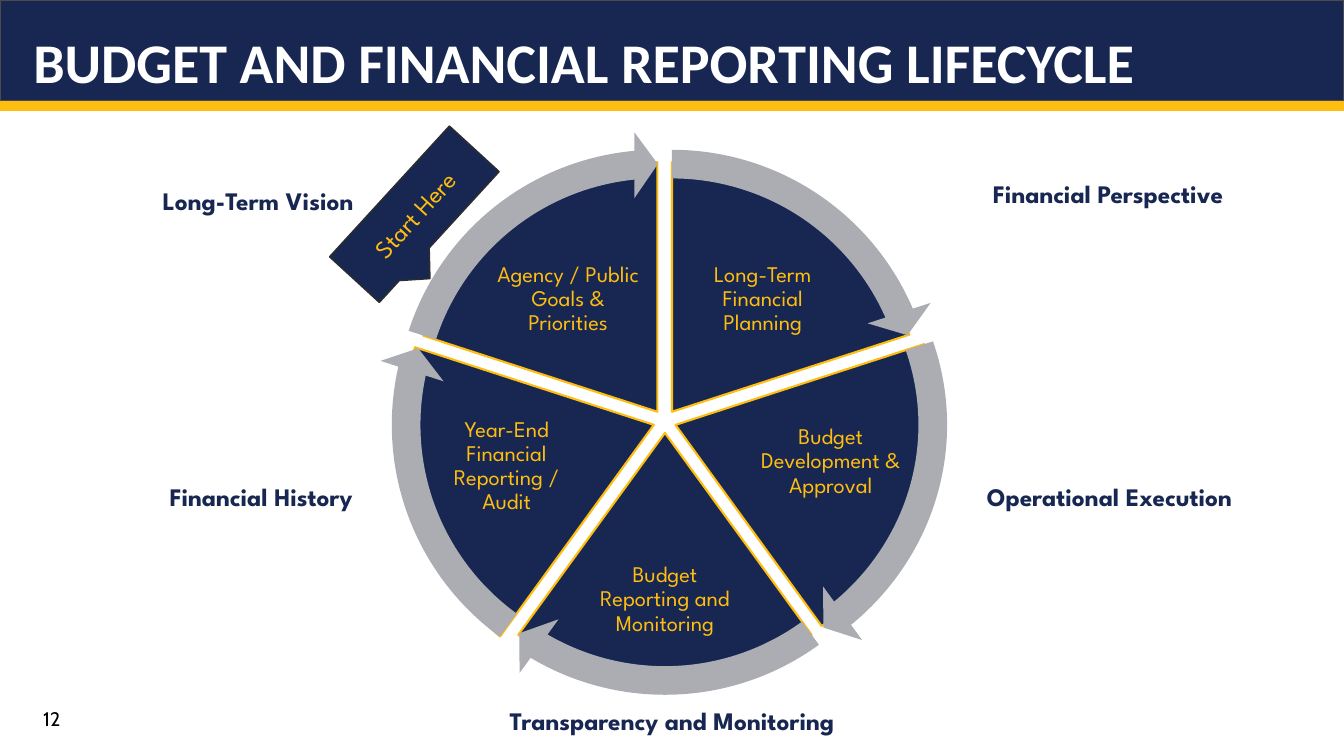
"""Build the budget and financial reporting lifecycle slide."""
from dataclasses import dataclass

from pptx import Presentation
from pptx.dml.color import RGBColor
from pptx.enum.shapes import MSO_SHAPE
from pptx.enum.text import MSO_ANCHOR, MSO_AUTO_SIZE, PP_ALIGN
from pptx.util import Inches, Pt

RECT, PIE = MSO_SHAPE.RECTANGLE, MSO_SHAPE.PIE
ARROW, CALLOUT = MSO_SHAPE.CIRCULAR_ARROW, MSO_SHAPE.RECTANGULAR_CALLOUT
TOP, MIDDLE, BOTTOM = MSO_ANCHOR.TOP, MSO_ANCHOR.MIDDLE, MSO_ANCHOR.BOTTOM
LEFT, CENTER = PP_ALIGN.LEFT, PP_ALIGN.CENTER
FIXED = MSO_AUTO_SIZE.NONE


@dataclass(frozen=True)
class Theme:
    """Colours, fonts and type sizes."""
    navy: str = "182751"
    gold: str = "FEBD11"
    gray: str = "ACADB3"
    white: str = "FFFFFF"
    black: str = "000000"
    edge: str = "4B4B4E"
    dark: str = "2C2D2E"
    head: str = "Calibri"
    body: str = "League Spartan"
    foot: str = "Cabin"
    title: int = 40
    label: int = 18
    stage: int = 16
    page: int = 14


THEME = Theme()
TITLE = "BUDGET AND FINANCIAL REPORTING LIFECYCLE"
PAGE = "12"
START = "Start Here"

STAGES = [
    ("Long-Term Financial Planning",
     (4.19, 1.61, 4.95, 4.95), (6.77, 2.44, 1.59, 1.06), (3.88, 1.3, 5.57, 5.57)),
    ("Budget Development & Approval",
     (4.08, 1.82, 5.24, 4.79), (7.46, 4.01, 1.56, 1.14), (3.83, 1.43, 5.75, 5.57)),
    ("Budget Reporting and Monitoring",
     (4.12, 1.82, 4.95, 4.95), (5.89, 5.3, 1.41, 1.3), (3.81, 1.51, 5.57, 5.57)),
    ("Year-End Financial Reporting / Audit",
     (4.01, 1.55, 4.95, 5.33), (4.29, 3.99, 1.47, 1.27), (3.7, 1.43, 5.57, 5.57)),
    ("Agency / Public Goals & Priorities",
     (4.08, 1.61, 4.88, 4.95), (4.85, 2.44, 1.57, 1.06), (3.74, 1.3, 5.57, 5.57)),
]
LABELS = [
    ("Long-Term Vision", (1.28, 1.79, 2.56, 0.4)),
    ("Financial Perspective", (9.49, 1.72, 3, 0.4)),
    ("Operational Execution", (9.52, 4.73, 2.97, 0.4)),
    ("Transparency and Monitoring", (4.74, 6.95, 3.85, 0.4)),
    ("Financial History", (1.28, 4.73, 2.62, 0.4)),
]
FULL = 216
STEP = FULL / len(STAGES)
NORTH = 162
SWEEP = 39.92


def place(box):
    """Turn a box in inches into lengths."""
    return [Inches(n) for n in box]


def draw(slide, kind, box, fill, line=None, width=1, turns=()):
    """Add a filled preset shape."""
    shape = slide.shapes.add_shape(kind, *place(box))
    shape.shadow.inherit = False
    shape.fill.solid()
    shape.fill.fore_color.rgb = RGBColor.from_string(fill)
    if line:
        shape.line.color.rgb = RGBColor.from_string(line)
        shape.line.width = Pt(width)
    else:
        shape.line.fill.background()
    for i, turn in enumerate(turns):
        shape.adjustments[i] = turn
    return shape


def write(shape, text, size, color, font=THEME.body, bold=False, align=CENTER,
          anchor=TOP, pads=(0.1, 0.05), space=1.0):
    """Set and format the text of a shape."""
    frame = shape.text_frame
    frame.text = text
    frame.word_wrap = True
    frame.auto_size = FIXED
    frame.vertical_anchor = anchor
    frame.margin_left = frame.margin_right = Inches(pads[0])
    frame.margin_top = frame.margin_bottom = Inches(pads[1])
    para = frame.paragraphs[0]
    para.alignment = align
    para.line_spacing = space
    face = para.runs[0].font
    face.name, face.size, face.bold = font, Pt(size), bold
    face.color.rgb = RGBColor.from_string(color)


def add_text(slide, box, *args, **kwargs):
    """Add a text box."""
    write(slide.shapes.add_textbox(*place(box)), *args, **kwargs)


def add_head(slide):
    """Add the title band and the page number."""
    draw(slide, RECT, (0, 1, 13.33, 0.1), THEME.gold)
    draw(slide, RECT, (0, 0, 13.33, 1), THEME.navy, THEME.edge)
    title = slide.shapes.title
    title.left, title.top, title.width, title.height = place((0.33, 0, 12.67, 1))
    write(title, TITLE, THEME.title, THEME.white, THEME.head, True, LEFT,
          BOTTOM, (0, 0.05), 0.9)
    title.element.getparent().append(title.element)
    add_text(slide, (0.33, 6.96, 2.07, 0.34), PAGE, THEME.page, THEME.black,
             THEME.foot, align=LEFT)


def add_wheel(slide):
    """Add the sectors and the arrows around them."""
    angles = [(NORTH + STEP * i) % FULL for i in range(len(STAGES) + 1)]
    for i, (text, slice_box, text_box, _) in enumerate(STAGES):
        draw(slide, PIE, slice_box, THEME.navy, THEME.gold, 1.5, angles[i:i + 2])
        add_text(slide, text_box, text, THEME.stage, THEME.gold, anchor=MIDDLE,
                 pads=(0.02, 0.02), space=0.9)
    for angle, (_, _, _, ring) in zip(angles, STAGES):
        end = (angle + SWEEP) % FULL
        draw(slide, ARROW, ring, THEME.gray,
             turns=(0.051, 3.275, end, angle, 0.059))


def main():
    """Build and save the slide."""
    deck = Presentation()
    deck.slide_width, deck.slide_height = Inches(13.33), Inches(7.5)
    slide = deck.slides.add_slide(deck.slide_layouts[5])
    add_head(slide)
    add_wheel(slide)
    for text, box in LABELS:
        add_text(slide, box, text, THEME.label, THEME.navy, bold=True)
    start = draw(slide, CALLOUT, (3.23, 1.79, 1.76, 0.67), THEME.navy,
                 THEME.dark, turns=(-0.208, 0.815))
    start.rotation = 312.5
    write(start, START, THEME.label, THEME.gold, anchor=MIDDLE)
    deck.save("out.pptx")


if __name__ == "__main__":
    main()
